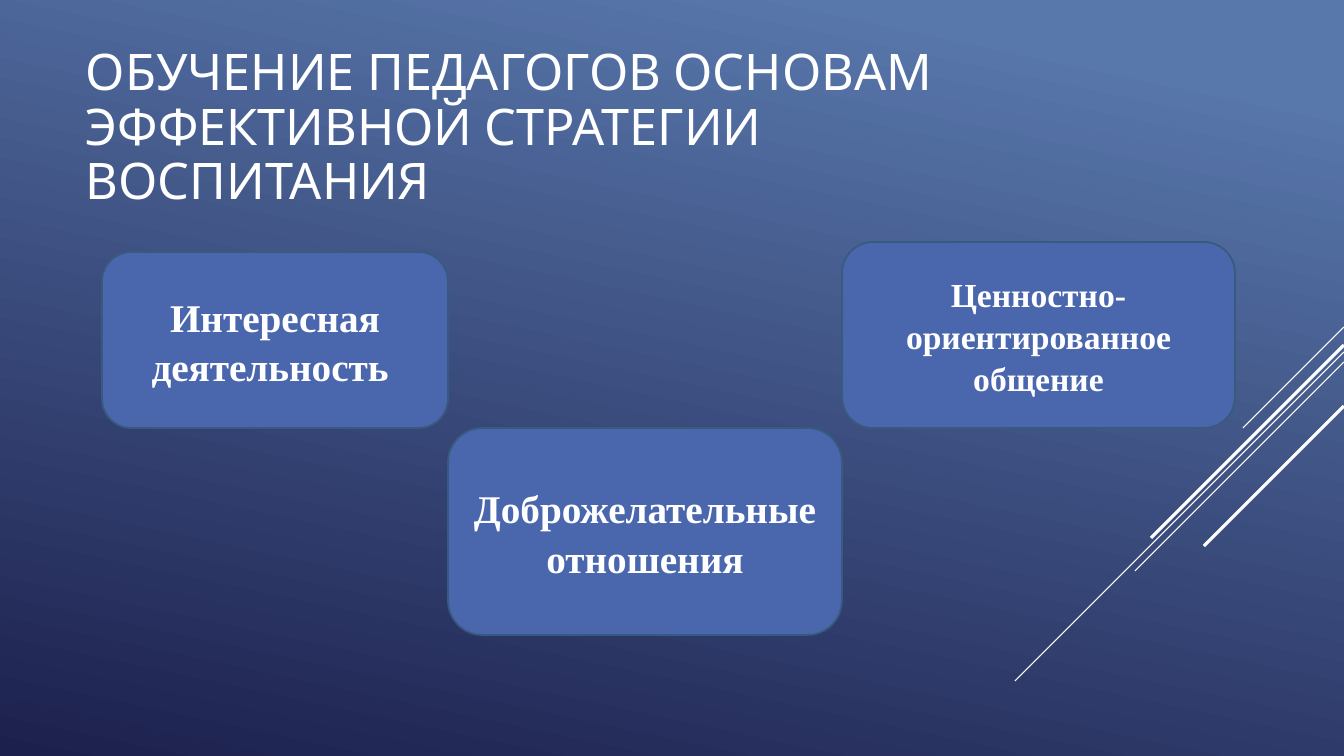
from lxml.etree import SubElement
from pptx import Presentation
from pptx.dml.color import RGBColor
from pptx.enum.shapes import MSO_CONNECTOR, MSO_SHAPE
from pptx.enum.text import MSO_ANCHOR, PP_ALIGN
from pptx.oxml.ns import qn
from pptx.util import Emu, Pt

# Content: lengths in px
SIZE = (1344, 756)
TITLE = "ОБУЧЕНИЕ ПЕДАГОГОВ ОСНОВАМ ЭФФЕКТИВНОЙ СТРАТЕГИИ ВОСПИТАНИЯ"
TITLE_BOX = (76, 16, 940, 226)
CARDS = [  # text, type size, (left, top, width, height)
    ("Интересная деятельность ", 28, (102, 252, 346, 176)),
    ("Доброжелательные отношения", 28, (448, 428, 394, 207)),
    ("Ценностно-ориентированное общение", 24, (842, 242, 393, 186)),
]
RAYS = [  # start height on the right edge, run at 45 degrees, weight
    (327, 101, 0.75),
    (352, 329, 0.75),
    (362, 209, 0.75),
    (345, 193, 2.25),
    (406, 140, 2.25),
]


class Theme:
    white = RGBColor(0xFF, 0xFF, 0xFF)
    card = RGBColor(0x4A, 0x66, 0xAC)
    edge = RGBColor(0x37, 0x5B, 0x7F)
    backdrop = [(0.1, RGBColor(0x58, 0x77, 0xAB)), (1, RGBColor(0x1C, 0x20, 0x4D))]
    backdrop_angle = 258
    title_font, title_size = "League Spartan", 36
    card_font = "Times New Roman"
    edge_weight = 1.25


def px(n):
    return Emu(round(n * 914400 / 100.8))


def write(shape, text, font, size, bold, align, spacing):
    tf = shape.text_frame
    tf.word_wrap = True
    tf.vertical_anchor = MSO_ANCHOR.MIDDLE
    p = tf.paragraphs[0]
    p.alignment = align
    p.line_spacing = spacing
    r = p.add_run()
    r.text = text
    r.font.name, r.font.size, r.font.bold = font, Pt(size), bold
    r.font.color.rgb = Theme.white


def add_ray(s, top, run, weight):
    right = SIZE[0]
    ray = s.shapes.add_connector(
        MSO_CONNECTOR.STRAIGHT, px(right), px(top), px(right - run), px(top + run))
    ray.line.color.rgb = Theme.white
    ray.line.width = Pt(weight)
    SubElement(ray._element.spPr, qn("a:effectLst"))


def add_card(s, text, size, box):
    sp = s.shapes.add_shape(MSO_SHAPE.ROUNDED_RECTANGLE, *map(px, box))
    sp.shadow.inherit = False
    sp.fill.solid()
    sp.fill.fore_color.rgb = Theme.card
    sp.line.color.rgb = Theme.edge
    sp.line.width = Pt(Theme.edge_weight)
    write(sp, text, Theme.card_font, size, True, PP_ALIGN.CENTER, 1.05)


def main():
    prs = Presentation()
    prs.slide_width, prs.slide_height = map(px, SIZE)
    s = prs.slides.add_slide(prs.slide_layouts[6])

    # Background gradient
    fill = s.background.fill
    fill.gradient()
    fill.gradient_angle = Theme.backdrop_angle
    for stop, (position, color) in zip(fill.gradient_stops, Theme.backdrop):
        stop.position = position
        stop.color.rgb = color

    # Diagonal rays
    for ray in RAYS:
        add_ray(s, *ray)

    # Title
    title = s.shapes.add_textbox(*map(px, TITLE_BOX))
    write(title, TITLE, Theme.title_font, Theme.title_size, False, PP_ALIGN.LEFT, 0.9)

    # Cards
    for card in CARDS:
        add_card(s, *card)

    prs.save("out.pptx")


if __name__ == "__main__":
    main()
